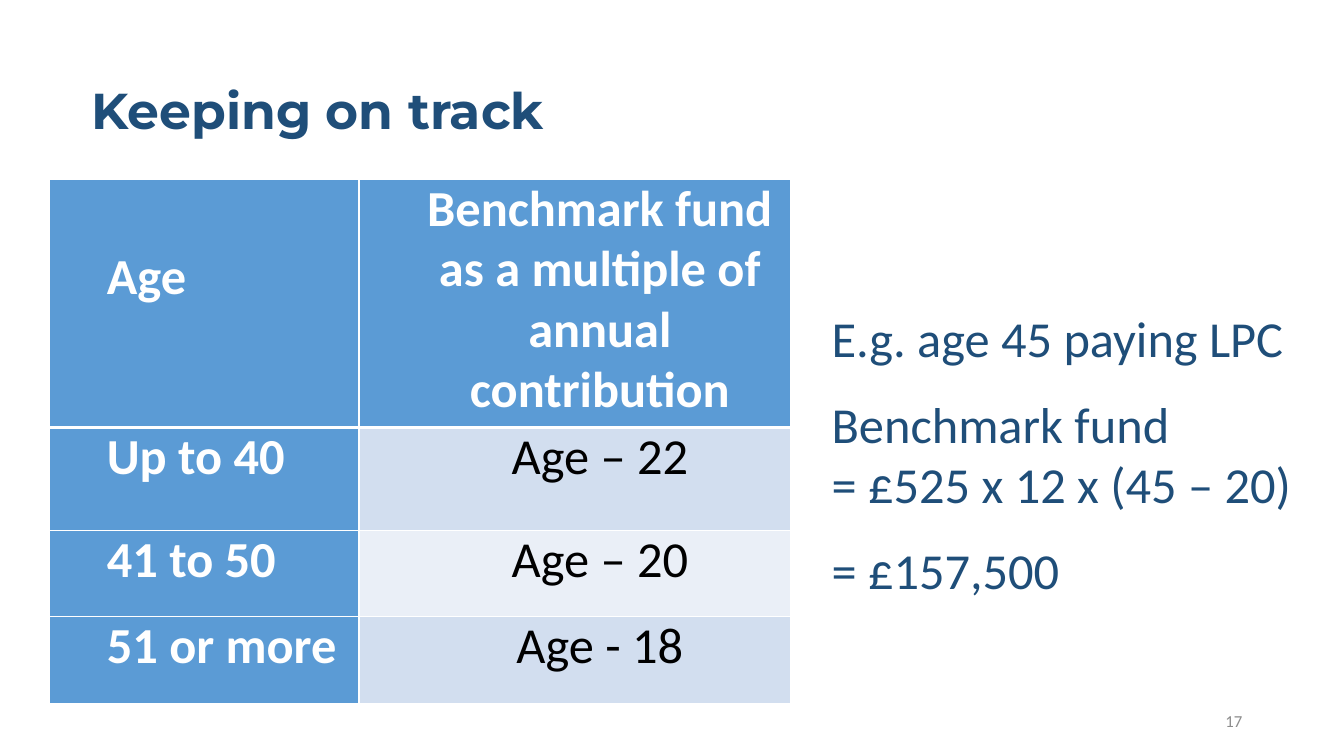
from dataclasses import dataclass

from lxml import etree
from pptx import Presentation
from pptx.dml.color import RGBColor
from pptx.enum.text import MSO_ANCHOR, MSO_AUTO_SIZE, PP_ALIGN
from pptx.oxml.ns import qn
from pptx.util import Inches, Pt

LEFT, CENTER, RIGHT = PP_ALIGN.LEFT, PP_ALIGN.CENTER, PP_ALIGN.RIGHT
TOP, MIDDLE = MSO_ANCHOR.TOP, MSO_ANCHOR.MIDDLE
NO_AUTOFIT = MSO_AUTO_SIZE.NONE


@dataclass(frozen=True)
class Theme:
    heading_font: str = "Montserrat"
    body_font: str = "Calibri"
    navy: str = "1F4E79"
    blue: str = "5B9BD5"
    band_dark: str = "D2DEEF"
    band_light: str = "EAEFF7"
    white: str = "FFFFFF"
    black: str = "000000"
    grey: str = "8C8C8C"
    text_size: float = 36
    number_size: float = 12
    table_leading: float = 43.2
    rule: float = 1
    header_rule: float = 3


@dataclass(frozen=True)
class Box:
    left: float
    top: float
    width: float
    height: float


@dataclass(frozen=True)
class BenchmarkRow:
    age: str
    fund: str
    height: float


THEME = Theme()
TITLE_BOX = Box(0.81, 0.4, 11.5, 1.45)
TABLE_BOX = Box(0.49, 1.78, 7.35, 5.2)
EXAMPLE_BOX = Box(8.15, 3, 4.86, 3.03)
NUMBER_BOX = Box(9.42, 6.95, 3, 0.4)
COLUMN_WIDTHS = (3.07, 4.28)
HEADER_TOP_MARGIN = 0.68
BENCHMARKS = (
    BenchmarkRow("Age", "Benchmark fund as a multiple of annual contribution", 2.46),
    BenchmarkRow("Up to 40", "Age – 22", 1.02),
    BenchmarkRow("41 to 50", "Age – 20", 0.86),
    BenchmarkRow("51 or more", "Age - 18", 0.86),
)
EXAMPLE = (
    "E.g. age 45 paying LPC",
    "Benchmark fund\v= £525 x 12 x (45 – 20)",
    "= £157,500",
)


def place(box: Box) -> tuple:
    return tuple(Inches(n) for n in (box.left, box.top, box.width, box.height))


def set_font(p, color: str, size: float = THEME.text_size,
             name: str = THEME.body_font, bold: bool = False) -> None:
    p.font.name, p.font.size, p.font.bold = name, Pt(size), bold
    p.font.color.rgb = RGBColor.from_string(color)


def add_title(slide, text: str) -> None:
    sp = slide.shapes.title
    sp.left, sp.top, sp.width, sp.height = place(TITLE_BOX)
    tf = sp.text_frame
    tf.auto_size, tf.vertical_anchor = NO_AUTOFIT, MIDDLE
    p = tf.paragraphs[0]
    p.text, p.alignment, p.line_spacing = text, LEFT, 0.9
    set_font(p, THEME.navy, name=THEME.heading_font, bold=True)


def add_text(slide, box: Box, lines: tuple, color: str, size: float,
             align=LEFT, anchor=TOP, gap: float = 0) -> None:
    tf = slide.shapes.add_textbox(*place(box)).text_frame
    tf.word_wrap, tf.vertical_anchor = True, anchor
    for i, line in enumerate(lines):
        p = tf.add_paragraph() if i else tf.paragraphs[0]
        p.text, p.alignment, p.space_after = line, align, Pt(gap)
        set_font(p, color, size)


def add_borders(cell, top: float, bottom: float) -> None:
    tc_pr = cell._tc.get_or_add_tcPr()
    widths = {"lnL": THEME.rule, "lnR": THEME.rule, "lnT": top, "lnB": bottom}
    for side, width in widths.items():
        ln = etree.SubElement(tc_pr, qn(f"a:{side}"), w=str(Pt(width)))
        fill = etree.SubElement(ln, qn("a:solidFill"))
        etree.SubElement(fill, qn("a:srgbClr"), val=THEME.white)


def format_cell(cell, text: str, row: int, col: int) -> None:
    header, label = row == 0, col == 0
    strong = header or label
    add_borders(cell,
                THEME.header_rule if row == 1 else THEME.rule,
                THEME.header_rule if header else THEME.rule)
    band = THEME.band_dark if row % 2 else THEME.band_light
    cell.fill.solid()
    cell.fill.fore_color.rgb = RGBColor.from_string(THEME.blue if strong else band)
    cell.margin_left, cell.margin_right = Inches(0.57), Inches(0.07)
    cell.margin_top = Inches(HEADER_TOP_MARGIN if header and label else 0)
    cell.margin_bottom = 0
    cell.vertical_anchor = TOP
    p = cell.text_frame.paragraphs[0]
    p.text, p.alignment = text, LEFT if label else CENTER
    p.line_spacing = Pt(THEME.table_leading)
    p.space_after = Pt(0 if header and not label else 6)
    set_font(p, THEME.white if strong else THEME.black, bold=strong)


def add_benchmark_table(slide) -> None:
    table = slide.shapes.add_table(len(BENCHMARKS), len(COLUMN_WIDTHS),
                                   *place(TABLE_BOX)).table
    for col, width in enumerate(COLUMN_WIDTHS):
        table.columns[col].width = Inches(width)
    for row, item in enumerate(BENCHMARKS):
        table.rows[row].height = Inches(item.height)
        for col, text in enumerate((item.age, item.fund)):
            format_cell(table.cell(row, col), text, row, col)


def main() -> None:
    prs = Presentation()
    prs.slide_width, prs.slide_height = Inches(13.33), Inches(7.5)
    slide = prs.slides.add_slide(prs.slide_layouts.get_by_name("Title Only"))

    # Title and benchmark table
    add_title(slide, "Keeping on track")
    add_benchmark_table(slide)

    # Slide number and worked example
    add_text(slide, NUMBER_BOX, ("17",), THEME.grey, THEME.number_size, RIGHT, MIDDLE)
    add_text(slide, EXAMPLE_BOX, EXAMPLE, THEME.navy, THEME.text_size, gap=18)

    prs.save("out.pptx")


if __name__ == "__main__":
    main()
